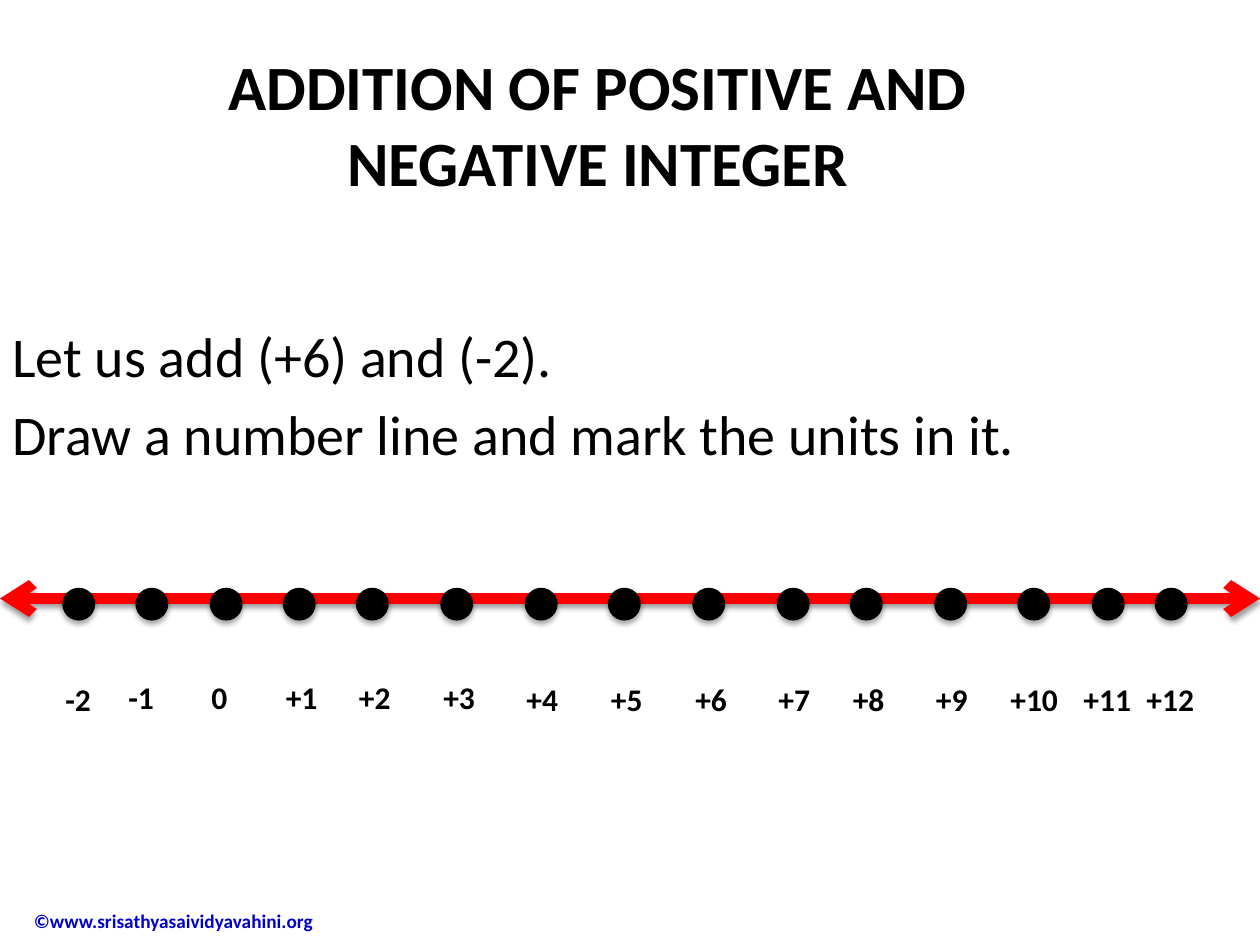
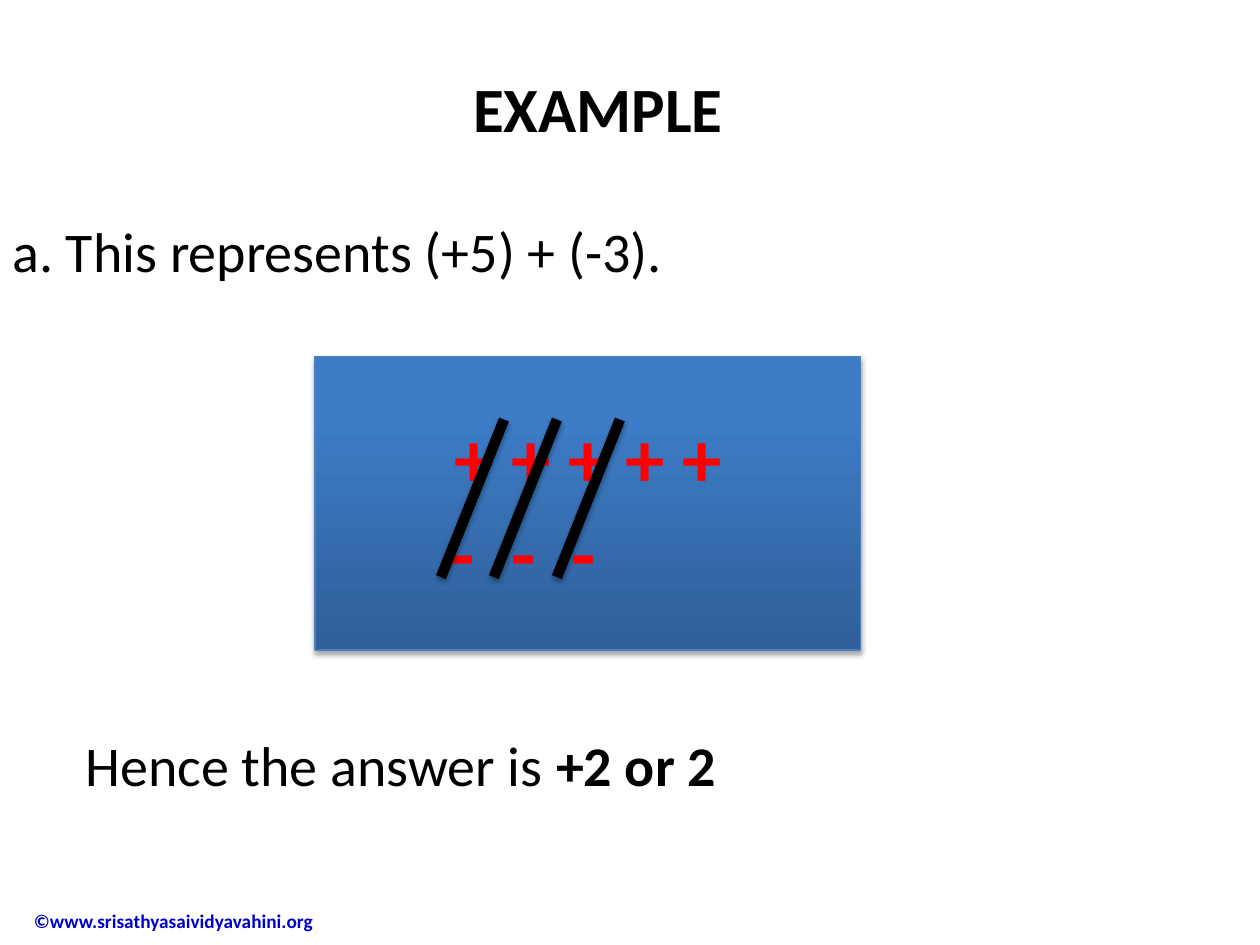
from dataclasses import dataclass
from itertools import accumulate

from lxml import etree
from pptx import Presentation
from pptx.dml.color import RGBColor
from pptx.enum.shapes import MSO_CONNECTOR, MSO_SHAPE
from pptx.enum.text import MSO_ANCHOR, PP_ALIGN
from pptx.oxml.ns import qn
from pptx.util import Inches, Pt

LINE = MSO_CONNECTOR.STRAIGHT
OVAL, RECT = MSO_SHAPE.OVAL, MSO_SHAPE.RECTANGLE
TOP, MID = MSO_ANCHOR.TOP, MSO_ANCHOR.MIDDLE
LEFT, CENTER = PP_ALIGN.LEFT, PP_ALIGN.CENTER


@dataclass(frozen=True)
class Theme:
    font: str = "Calibri"
    ink: str = "000000"
    red: str = "FF0000"
    link: str = "0000CC"
    edge: str = "4B7EBC"
    low: str = "2F5F99"
    high: str = "3D7CC7"
    head: int = 36
    body: int = 32
    sign: int = 45
    mark: int = 18
    foot: int = 11
    thick: float = 6
    thin: float = 0.75


T = Theme()
WIDE, HIGH = 10, 7.5
UNIT = WIDE / 120

FOOT = "©www.srisathyasaividyavahini.org"
SUM = {
    "title": "ADDITION OF POSITIVE AND\vNEGATIVE INTEGER",
    "body": ["Let us add (+6) and (-2).",
             "Draw a number line and mark the units in it."],
    "marks": ["-2", "-1", "0"] + [f"+{n}" for n in range(1, 13)],
    "steps": [6, 7, 7, 7, 7, 8, 8, 8, 8, 8, 7, 8, 8, 7, 6],
    "raised": ["-1", "0", "+1", "+2", "+3"],
}
CASE = {
    "title": "EXAMPLE",
    "body": ["a. This represents (+5) + (-3)."],
    "signs": ["+ + + + +", "\t-\t-\t-"],
    "tabs": [0.98, 1.46, 1.94],
    "cuts": [42, 47, 53],
    "end": ["Hence the answer is ", "+2 or 2"],
}


def rgb(code):
    return RGBColor.from_string(code)


def box(*sides):
    return [Inches(round(side, 2)) for side in sides]


def style(par, size, color=T.ink, bold=False, align=LEFT):
    par.alignment = align
    for run in par.runs:
        font = run.font
        font.name, font.size, font.bold = T.font, Pt(size), bold
        font.color.rgb = rgb(color)


def write(shapes, at, lines, size, color=T.ink, bold=False, wrap=True, anchor=TOP):
    frame = shapes.add_textbox(*box(*at)).text_frame
    frame.word_wrap, frame.vertical_anchor = wrap, anchor
    frame.text = "\n".join(lines)
    for i, par in enumerate(frame.paragraphs):
        par.space_before = Pt(0.2 * size if i else 0)
        style(par, size, color, bold)
    return frame


def shade(shape, alpha, dist):
    effect = etree.SubElement(shape._element.spPr, qn("a:effectLst"))
    cast = etree.SubElement(effect, qn("a:outerShdw"), blurRad=str(Pt(3.1)),
                            dist=str(Pt(dist)), dir="5400000", rotWithShape="0")
    black = etree.SubElement(cast, qn("a:srgbClr"), val=T.ink)
    etree.SubElement(black, qn("a:alpha"), val=str(alpha * 1000))


def stroke(shapes, ends, color, arrows=False):
    line = shapes.add_connector(LINE, *box(*ends))
    line.line.color.rgb, line.line.width = rgb(color), Pt(T.thick)
    if arrows:
        for tag in ("a:headEnd", "a:tailEnd"):
            etree.SubElement(line.line._get_or_add_ln(), qn(tag), type="arrow")
    shade(line, 38, 1.6)


def edge(shape, color):
    shape.line.color.rgb, shape.line.width = rgb(color), Pt(T.thin)
    shade(shape, 35, 1.8)


def start(deck, text, top, tall):
    slide = deck.slides.add_slide(deck.slide_layouts[5])
    title = slide.shapes.title
    title.left, title.top, title.width, title.height = box(7 * UNIT, top, 100 * UNIT, tall)
    frame = title.text_frame
    frame.text, frame.word_wrap, frame.vertical_anchor = text, True, TOP
    style(frame.paragraphs[0], T.head, T.ink, True, CENTER)
    write(slide.shapes, (0.17, 7.1, 2.52, 0.41), [FOOT], T.foot, T.link, True, False, MID)
    return slide.shapes


def draw_sum(deck):
    shapes = start(deck, SUM["title"], 4 * UNIT, 15 * UNIT)
    write(shapes, (0, HIGH / 3, WIDE, HIGH / 5), SUM["body"], T.body)
    axis = shapes.add_group_shape().shapes
    stroke(axis, (0, 57 * UNIT, WIDE, 57 * UNIT), T.red, True)
    names = shapes.add_group_shape().shapes
    for mark, col in zip(SUM["marks"], accumulate(SUM["steps"])):
        dot = axis.add_shape(OVAL, *box(col * UNIT, 56 * UNIT, 3 * UNIT, 3 * UNIT))
        dot.fill.solid()
        dot.fill.fore_color.rgb = rgb(T.ink)
        edge(dot, T.ink)
        shift = 2 if mark == "-1" or len(mark) == 3 else 1
        top = 5.33 if mark in SUM["raised"] else 5.35
        wide = {1: 0.33, 2: 0.46, 3: 0.58}[len(mark)]
        write(names, ((col - shift) * UNIT, top, wide, 0.4), [mark],
              T.mark, bold=True, wrap=False)


def draw_case(deck):
    shapes = start(deck, CASE["title"], 6 * UNIT, 10 * UNIT)
    write(shapes, (0, 20 * UNIT, 67 * UNIT, HIGH / 10), CASE["body"], T.body)
    card = shapes.add_shape(RECT, *box(*(n * UNIT for n in (30, 34, 52, 28))))
    card.fill.gradient()
    card.fill.gradient_angle = 90
    for stop, place, color in zip(card.fill.gradient_stops, (0, 0.8), (T.low, T.high)):
        stop.position, stop.color.rgb = place, rgb(color)
    edge(card, T.edge)
    frame = card.text_frame
    frame.vertical_anchor = MID
    frame.text = "\n".join(CASE["signs"])
    plus, minus = frame.paragraphs
    stops = etree.SubElement(minus._p.get_or_add_pPr(), qn("a:tabLst"))
    for place in CASE["tabs"]:
        etree.SubElement(stops, qn("a:tab"), pos=str(Inches(place)), algn="l")
    style(plus, T.sign, T.red, True, CENTER)
    style(minus, T.sign, T.red, True)
    for col in CASE["cuts"]:
        stroke(shapes, (n * UNIT for n in (col + 6, 40, col, 55)), T.ink)
    lead, bold = CASE["end"]
    par = write(shapes, (7 * UNIT, 69 * UNIT, 5.55, HIGH / 10), [lead], T.body).paragraphs[0]
    par.add_run().text = bold
    style(par, T.body)
    par.runs[-1].font.bold = True


def main():
    deck = Presentation()
    deck.slide_width, deck.slide_height = box(WIDE, HIGH)
    draw_sum(deck)
    draw_case(deck)
    deck.save("out.pptx")


if __name__ == "__main__":
    main()
